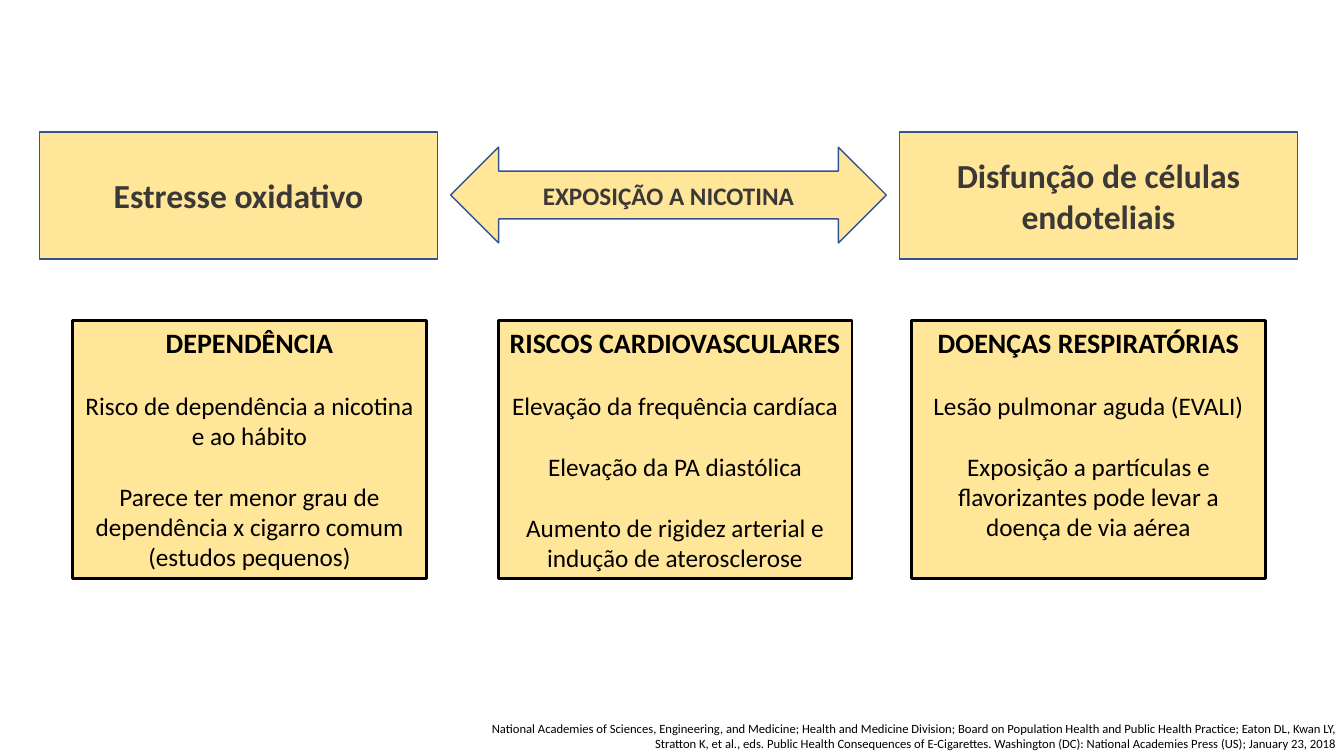
from pptx import Presentation
from pptx.dml.color import RGBColor
from pptx.enum.shapes import MSO_SHAPE
from pptx.enum.text import MSO_ANCHOR, PP_ALIGN
from pptx.util import Inches, Pt

CREAM = RGBColor(0xFF, 0xE6, 0x99)
BLUE = RGBColor(0x32, 0x54, 0x91)
GRAY = RGBColor(0x3B, 0x38, 0x38)
BLACK = RGBColor(0, 0, 0)

CAUSES = [(0.39, "Estresse oxidativo"), (8.92, "Disfunção de células endoteliais")]
RISKS = [
    (0.72, "DEPENDÊNCIA", [
        "Risco de dependência a nicotina e ao hábito",
        "Parece ter menor grau de dependência x cigarro comum (estudos pequenos)"]),
    (4.94, "RISCOS CARDIOVASCULARES", [
        "Elevação da frequência cardíaca",
        "Elevação da PA diastólica",
        "Aumento de rigidez arterial e indução de aterosclerose"]),
    (9.04, "DOENÇAS RESPIRATÓRIAS", [
        "Lesão pulmonar aguda (EVALI)",
        "Exposição a partículas e flavorizantes pode levar a doença de via aérea"]),
]
SOURCE = (
    "National Academies of Sciences, Engineering, and Medicine; Health and Medicine "
    "Division; Board on Population Health and Public Health Practice; Eaton DL, Kwan LY, "
    "Stratton K, et al., eds. Public Health Consequences of E-Cigarettes. Washington (DC): "
    "National Academies Press (US); January 23, 2018"
)


def style(para, text, size, color, bold=False, align=PP_ALIGN.CENTER):
    para.text = text
    para.alignment = align
    font = para.font
    font.name = "Calibri"
    font.size = Pt(size)
    font.bold = bold
    font.color.rgb = color


def add_box(slide, kind, place, line, width, anchor):
    box = slide.shapes.add_shape(kind, *map(Inches, place))
    box.shadow.inherit = False
    box.fill.solid()
    box.fill.fore_color.rgb = CREAM
    box.line.color.rgb = line
    box.line.width = Pt(width)
    box.text_frame.word_wrap = True
    box.text_frame.vertical_anchor = anchor
    return box.text_frame


def add_label(slide, kind, place, text, size):
    frame = add_box(slide, kind, place, BLUE, 1, MSO_ANCHOR.MIDDLE)
    style(frame.paragraphs[0], text, size, GRAY, True)


def add_risk(slide, left, title, items):
    place = (left, 3.18, 3.51, 2.56)
    frame = add_box(slide, MSO_SHAPE.RECTANGLE, place, BLACK, 2, MSO_ANCHOR.TOP)
    style(frame.paragraphs[0], title, 20, BLACK, True)
    for item in items:
        para = frame.add_paragraph()
        style(para, item, 18, BLACK)
        para.space_before = Pt(22)


def add_source(slide):
    place = (4.71, 7.1, 8.63, 0.4)
    frame = slide.shapes.add_textbox(*map(Inches, place)).text_frame
    frame.word_wrap = True
    style(frame.paragraphs[0], SOURCE, 9, BLACK, align=PP_ALIGN.RIGHT)


def main():
    deck = Presentation()
    deck.slide_width = Inches(13.33)
    deck.slide_height = Inches(7.5)
    slide = deck.slides.add_slide(deck.slide_layouts[6])
    for left, text in CAUSES:
        add_label(slide, MSO_SHAPE.RECTANGLE, (left, 1.31, 3.95, 1.26), text, 24)
    add_label(slide, MSO_SHAPE.LEFT_RIGHT_ARROW, (4.47, 1.46, 4.32, 0.95),
              "EXPOSIÇÃO A NICOTINA", 18)
    for left, title, items in RISKS:
        add_risk(slide, left, title, items)
    add_source(slide)
    deck.save("out.pptx")


if __name__ == "__main__":
    main()
